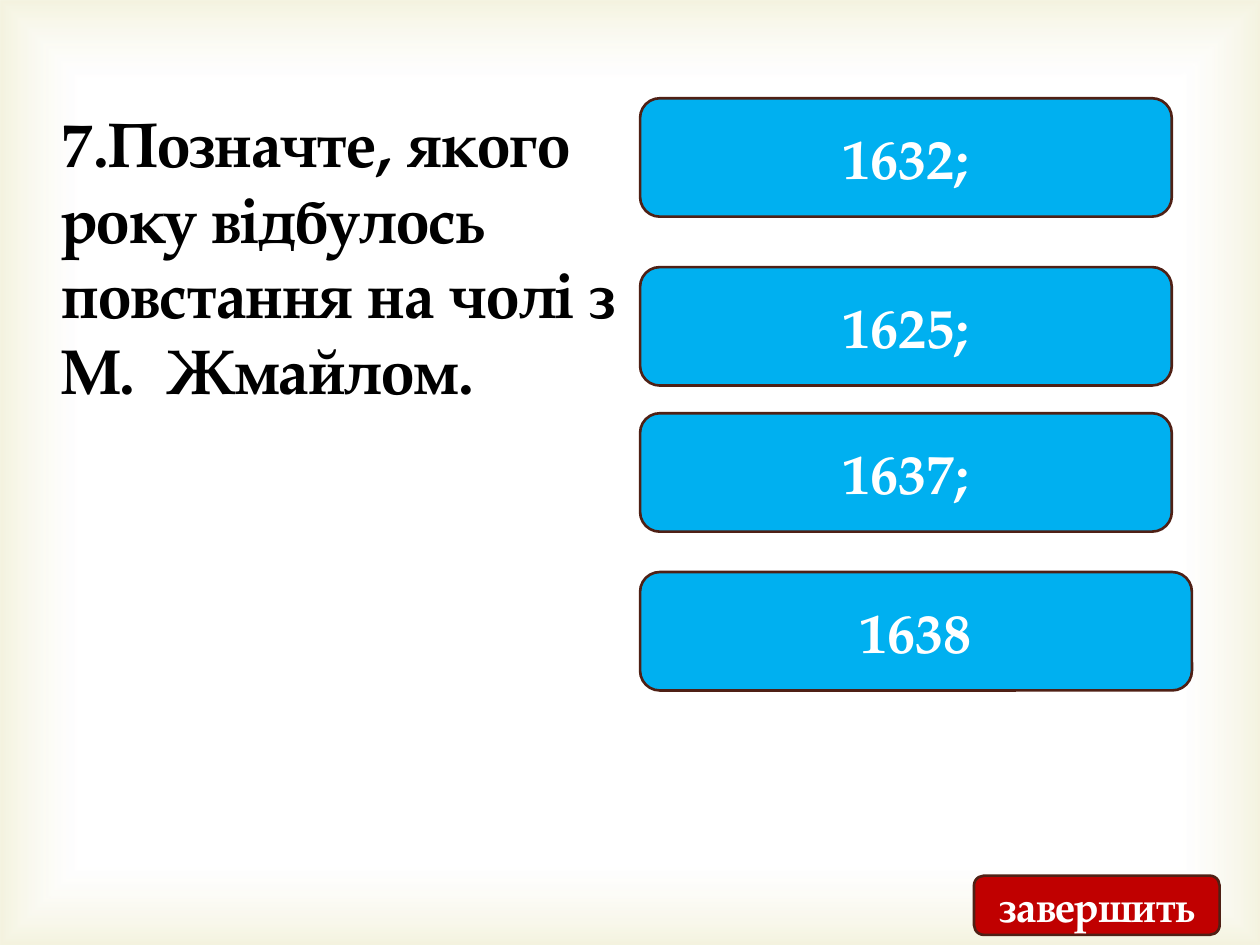
from lxml.etree import SubElement
from pptx import Presentation
from pptx.dml.color import RGBColor
from pptx.enum.shapes import MSO_SHAPE
from pptx.enum.text import MSO_ANCHOR, MSO_AUTO_SIZE, PP_ALIGN
from pptx.oxml import parse_xml
from pptx.oxml.ns import nsdecls, qn
from pptx.util import Inches, Pt

THEME = {
    "font": "TeX Gyre Pagella",
    "question": RGBColor.from_string("000000"),
    "label": RGBColor.from_string("FFFFFF"),
    "answer": RGBColor.from_string("00B0F0"),
    "finish": RGBColor.from_string("C00000"),
    "outline": RGBColor.from_string("4F2015"),
    "glow": [(83, "FFFFFF", 11), (100, "D1CA75", 23)],
    "question_size": Pt(36),
    "answer_size": Pt(32),
    "finish_size": Pt(24),
}


def write(frame, text, size, color, align, anchor):
    frame.text = text
    frame.word_wrap = True
    frame.vertical_anchor = anchor
    paragraph = frame.paragraphs[0]
    paragraph.alignment = align
    font = paragraph.runs[0].font
    font.color.rgb = color
    for key, value in {"name": THEME["font"], "size": size, "bold": True}.items():
        setattr(font, key, value)


def add_button(box, text, fill, size):
    button = slide.shapes.add_shape(MSO_SHAPE.ROUNDED_RECTANGLE, *map(Inches, box))
    button.shadow.inherit = False
    button.fill.solid()
    button.fill.fore_color.rgb = fill
    button.line.color.rgb = THEME["outline"]
    button.line.width = Pt(1.5)
    write(button.text_frame, text, size, THEME["label"], PP_ALIGN.CENTER, MSO_ANCHOR.MIDDLE)


prs = Presentation()
prs.slide_width, prs.slide_height = Inches(10), Inches(7.5)
slide = prs.slides.add_slide(prs.slide_layouts.get_by_name("Title Only"))

# Soft glow along the slide edges, behind everything
glow = slide.shapes.add_shape(MSO_SHAPE.RECTANGLE, 0, 0, prs.slide_width, prs.slide_height)
glow.shadow.inherit = False
glow.line.fill.background()
gradient = parse_xml(f'<a:gradFill {nsdecls("a")} rotWithShape="1"/>')
stops = SubElement(gradient, qn("a:gsLst"))
for position, color, alpha in THEME["glow"]:
    stop = SubElement(stops, qn("a:gs"), pos=str(position * 1000))
    tint = SubElement(stop, qn("a:srgbClr"), val=color)
    SubElement(tint, qn("a:alpha"), val=str(alpha * 1000))
rays = SubElement(gradient, qn("a:path"), attrib={"path": "rect"})
SubElement(rays, qn("a:fillToRect"), attrib=dict.fromkeys("ltrb", "50000"))
glow.element.spPr.find(qn("a:prstGeom")).addnext(gradient)
slide.shapes.title.element.addprevious(glow.element)

# Question
question = slide.shapes.title
for key, value in {"left": 0.39, "top": 0.78, "width": 4.69, "height": 2.52}.items():
    setattr(question, key, Inches(value))
write(question.text_frame, "7.Позначте, якого року відбулось повстання на чолі з М.  Жмайлом.",
      THEME["question_size"], THEME["question"], PP_ALIGN.LEFT, MSO_ANCHOR.TOP)
question.text_frame.auto_size = MSO_AUTO_SIZE.SHAPE_TO_FIT_TEXT

# Answers
answers = [("1632;", 0.78, 4.22), ("1625;", 2.12, 4.22), ("1637;", 3.28, 4.22), ("1638", 4.54, 4.38)]
for year, top, width in answers:
    add_button((5.08, top, width, 0.94), year, THEME["answer"], THEME["answer_size"])

# Finish button
add_button((7.73, 6.95, 1.95, 0.47), "завершить", THEME["finish"], THEME["finish_size"])

prs.save("out.pptx")
